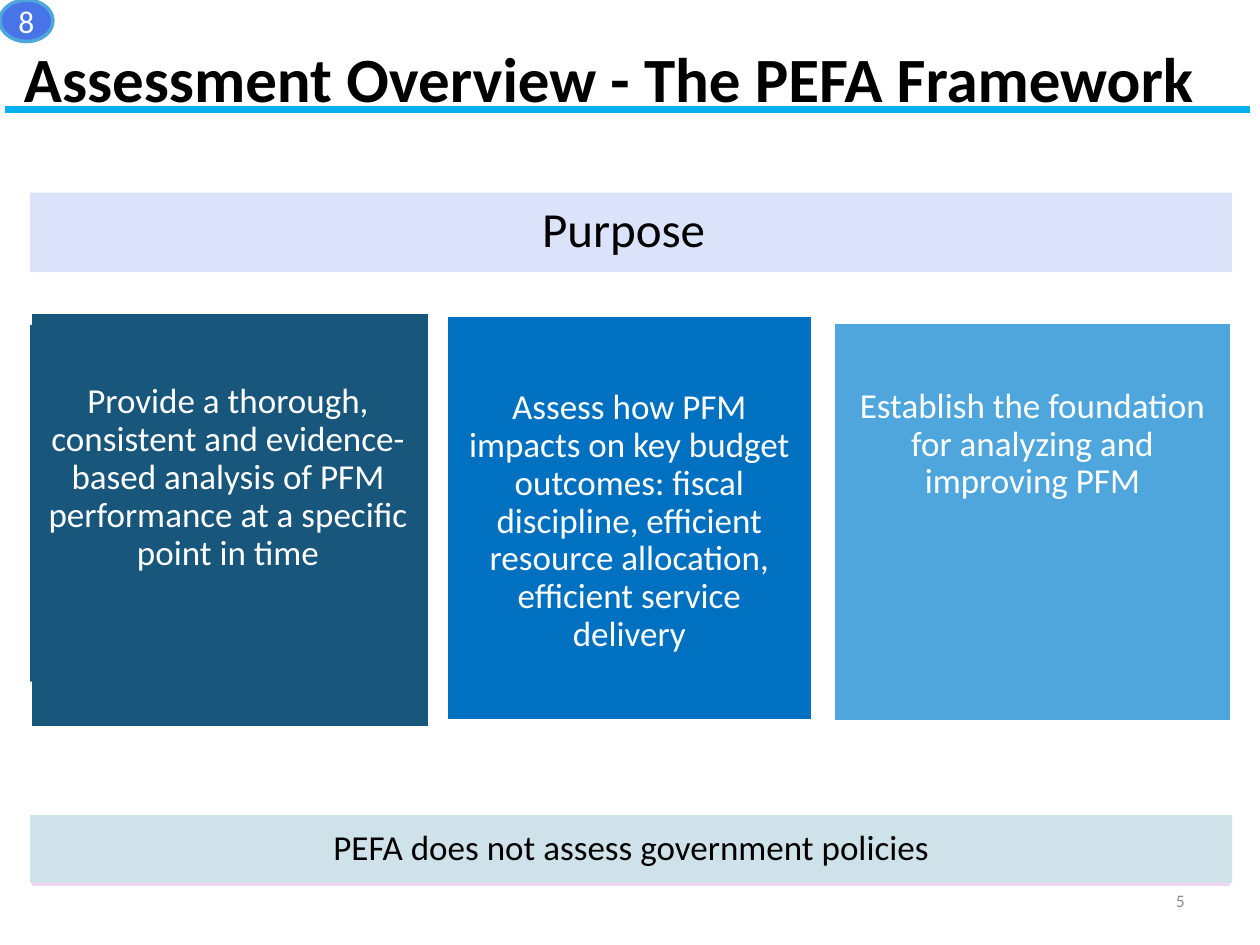
from lxml import etree
from pptx import Presentation
from pptx.dml.color import RGBColor
from pptx.enum import shapes, text
from pptx.oxml import ns
from pptx.util import Inches, Pt

COLORS = {
    "white": "FFFFFF", "black": "000000", "gray": "8C8C8C", "rule": "00AFEF",
    "navy": "19567C", "blue": "0070C0", "sky": "4EA6DC", "royal": "4775E7",
    "lavender": "DAE3FA", "pink": "F4D5F5", "mist": "CFE2E9",
}
ALIGN = text.PP_ALIGN
ANCHOR = text.MSO_ANCHOR
SHAPE = shapes.MSO_SHAPE
BODY = {"size": 20, "line_spacing": 0.9}


class SlideBuilder:
    """Holds the style and the current slide and adds each kind of element."""

    def __init__(self, slide, font="Calibri"):
        self.slide = slide
        self.font = font

    def color(self, name):
        return RGBColor.from_string(COLORS[name])

    def rule(self, start, end, color, width):
        points = [Inches(value) for value in (*start, *end)]
        line = self.slide.shapes.add_connector(shapes.MSO_CONNECTOR.STRAIGHT, *points)
        line.line.color.rgb = self.color(color)
        line.line.width = Pt(width)
        etree.SubElement(line._element.spPr, ns.qn("a:effectLst"))

    def block(self, box, fill, line=None, kind=SHAPE.RECTANGLE):
        shape = self.slide.shapes.add_shape(kind, *[Inches(value) for value in box])
        shape.shadow.inherit = False
        shape.fill.solid()
        shape.fill.fore_color.rgb = self.color(fill)
        if line:
            shape.line.color.rgb = self.color(line)
            shape.line.width = Pt(2)
        else:
            shape.line.fill.background()
        return shape

    def label(self, box, words, **style):
        shape = self.slide.shapes.add_textbox(*[Inches(value) for value in box])
        self.set_words(shape, words, **style)

    def set_words(self, shape, words, size, color="black", bold=False, align=ALIGN.CENTER,
                  anchor=ANCHOR.MIDDLE, insets=(0.1, 0.05, 0.1, 0.05), line_spacing=1.0):
        frame = shape.text_frame
        left, top, right, bottom = [Inches(value) for value in insets]
        frame_format = {"word_wrap": True, "vertical_anchor": anchor,
                        "margin_left": left, "margin_top": top,
                        "margin_right": right, "margin_bottom": bottom}
        for name, value in frame_format.items():
            setattr(frame, name, value)
        paragraph = frame.paragraphs[0]
        paragraph.alignment = align
        paragraph.line_spacing = line_spacing
        run = paragraph.add_run()
        run.text = words
        for name, value in {"name": self.font, "size": Pt(size), "bold": bold}.items():
            setattr(run.font, name, value)
        run.font.color.rgb = self.color(color)


def main():
    presentation = Presentation()
    presentation.slide_width = Inches(10)
    presentation.slide_height = Inches(7.5)
    builder = SlideBuilder(presentation.slides.add_slide(presentation.slide_layouts[6]))

    builder.rule((0.04, 0.87), (9.92, 0.87), "rule", 3.6)
    builder.label((9.11, 6.95, 0.39, 0.4), "5", size=10, color="gray", align=ALIGN.RIGHT)

    cards = [
        ((0.24, 2.48, 3.17, 3.3), "navy", (0.24, 2.58, 3.14, 2.83), 0.5,
         "Provide a thorough, consistent and evidence-based analysis of PFM "
         "performance at a specific point in time"),
        ((3.54, 2.5, 2.91, 3.22), "blue", (3.54, 3.15, 2.91, 2.05), 0.17,
         "Assess how PFM impacts on key budget outcomes: fiscal discipline, "
         "efficient resource allocation, efficient service delivery"),
        ((6.61, 2.56, 3.17, 3.17), "sky", (6.61, 2.84, 3.17, 1.78), 0.5,
         "Establish the foundation for analyzing and improving PFM"),
    ]
    for box, fill, text_box, bottom, words in cards:
        builder.block(box, fill, "white")
        if fill == "navy":
            builder.block(text_box, fill)
        builder.label(text_box, words, color="white", insets=(0.1, 0.1, 0.1, bottom), **BODY)

    builder.block((0.24, 6.51, 9.54, 0.54), "pink", "white")
    policy_bar = builder.block((0.24, 6.47, 9.54, 0.54), "mist")
    builder.set_words(policy_bar, "PEFA does not assess government policies", **BODY)

    purpose_box = (0.24, 1.53, 9.54, 0.63)
    for line in ("white", None):
        builder.block(purpose_box, "lavender", line)
    builder.label((0.6, 1.53, 8.7, 0.57), "Purpose", size=28, anchor=ANCHOR.TOP)

    badge = builder.block((0, 0, 0.42, 0.33), "royal", "sky", SHAPE.OVAL)
    builder.set_words(badge, "8", size=18, color="white", insets=(0, 0, 0, 0))
    builder.label((0.19, 0.31, 9.65, 0.61), "Assessment Overview - The PEFA Framework",
                  size=36, bold=True, align=ALIGN.LEFT, anchor=ANCHOR.TOP,
                  insets=(0, 0, 0, 0))

    presentation.save("out.pptx")


if __name__ == "__main__":
    main()
